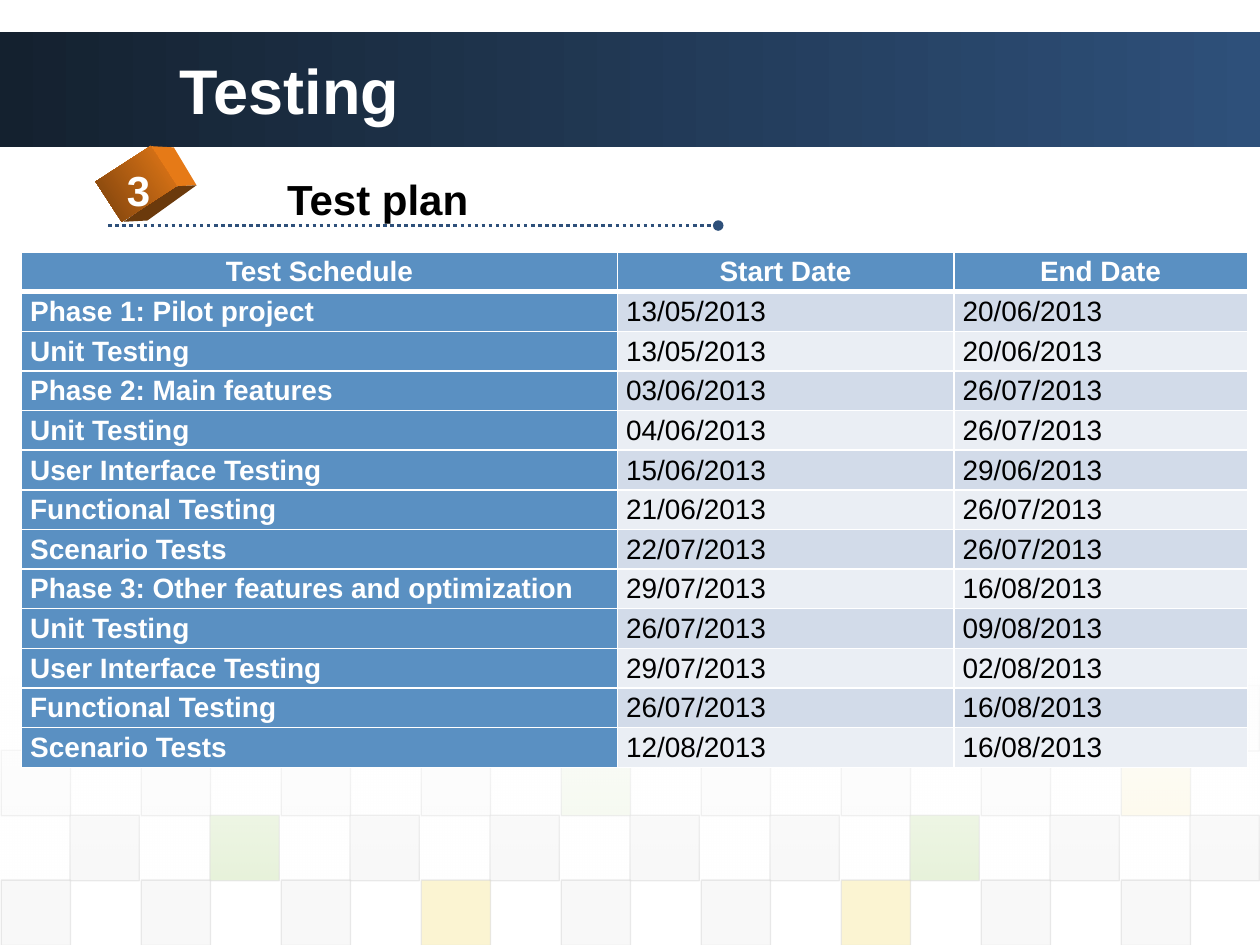
import pptx
import pptx.dml.color
import pptx.enum.dml
import pptx.enum.shapes
import pptx.enum.text
import pptx.oxml
import pptx.oxml.ns
import pptx.util
from lxml import etree

Inches = pptx.util.Inches
RGBColor = pptx.dml.color.RGBColor
ALIGN = pptx.enum.text.PP_ALIGN
ANCHOR = pptx.enum.text.MSO_ANCHOR
RECTANGLE = pptx.enum.shapes.MSO_SHAPE.RECTANGLE

WHITE, BLACK = RGBColor(255, 255, 255), RGBColor(0, 0, 0)
NAVY, DARK_NAVY = RGBColor(0x2E, 0x50, 0x7A), RGBColor(0x14, 0x21, 0x2F)
GREY, PALE_GREY = RGBColor(0xDD, 0xDD, 0xDD), RGBColor(0xEA, 0xEA, 0xEA)
GREEN, YELLOW = RGBColor(0x8A, 0xC2, 0x46), RGBColor(0xEF, 0xC8, 0x21)
ORANGE, BROWN = RGBColor(0xE6, 0x7A, 0x17), RGBColor(0x7A, 0x41, 0x0D)
DARK_BROWN = RGBColor(0x6B, 0x3A, 0x0C)
BLUE = RGBColor(0x5A, 0x90, 0xC2)
BANDS = RGBColor(0xD2, 0xDB, 0xE9), RGBColor(0xEA, 0xEE, 0xF4)

SCHEDULE = [
    ("Test Schedule", "Start Date", "End Date"),
    ("Phase 1: Pilot project", "13/05/2013", "20/06/2013"),
    ("Unit Testing", "13/05/2013", "20/06/2013"),
    ("Phase 2: Main features", "03/06/2013", "26/07/2013"),
    ("Unit Testing", "04/06/2013", "26/07/2013"),
    ("User Interface Testing", "15/06/2013", "29/06/2013"),
    ("Functional Testing", "21/06/2013", "26/07/2013"),
    ("Scenario Tests", "22/07/2013", "26/07/2013"),
    ("Phase 3: Other features and optimization", "29/07/2013", "16/08/2013"),
    ("Unit Testing", "26/07/2013", "09/08/2013"),
    ("User Interface Testing", "29/07/2013", "02/08/2013"),
    ("Functional Testing", "26/07/2013", "16/08/2013"),
    ("Scenario Tests", "12/08/2013", "16/08/2013"),
]
COLUMN_WIDTHS = [4.73, 2.67, 2.33]

# Checkerboard rows: first column, opacity %, base colour, coloured columns
TILE_ROWS = [
    (1, 5, PALE_GREY, {1: YELLOW, 7: YELLOW, 9: GREY, 11: YELLOW, 15: GREEN}),
    (0, 10, GREY, {8: GREEN, 16: YELLOW}),
    (1, 20, GREY, {3: GREEN, 13: GREEN}),
    (0, 20, GREY, {6: YELLOW, 12: YELLOW}),
]
TILE_TOP, TILE_STEP_X, TILE_STEP_Y = 5.44, 10 / 18, 0.515

# Visible sides of the cube, in inches
CUBE_SIDES = [
    ([(1.2, 1.16), (1.38, 1.17), (1.56, 1.47), (1.38, 1.48)], ORANGE),
    ([(0.98, 1.76), (1.38, 1.48), (1.56, 1.47), (1.17, 1.75)], DARK_BROWN),
]


def write_text(frame, text, size=16, color=WHITE, bold=True, align=None):
    paragraph = frame.paragraphs[0]
    paragraph.alignment = align
    run = paragraph.add_run()
    run.text = text
    font = run.font
    font.name, font.size, font.bold = "Arial", pptx.util.Pt(size), bold
    font.color.rgb = color
    return paragraph


def add_label(slide, box, text, anchor=ANCHOR.TOP, **text_format):
    frame = slide.shapes.add_textbox(*map(Inches, box)).text_frame
    frame.word_wrap = True
    frame.vertical_anchor = anchor
    write_text(frame, text, **text_format)


def add_rectangle(slide, box):
    shape = slide.shapes.add_shape(RECTANGLE, *map(Inches, box))
    shape.shadow.inherit = False
    shape.line.fill.background()
    return shape


def set_gradient(shape, colors, angle):
    shape.fill.gradient()
    shape.fill.gradient_angle = angle
    for stop, color in zip(shape.fill.gradient_stops, colors):
        stop.color.rgb = color


def set_opacity(color_parent, percent):
    color = next(color_parent.iter(pptx.oxml.ns.qn("a:srgbClr")))
    etree.SubElement(color, pptx.oxml.ns.qn("a:alpha"), val=str(percent * 1000))


def add_checkerboard(slide):
    for row, (first, opacity, base, accents) in enumerate(TILE_ROWS):
        for column in range(first, 18 - (1 - first), 2):
            tile = add_rectangle(slide, (column * TILE_STEP_X + 0.01 * (1 - first),
                                         TILE_TOP + row * TILE_STEP_Y, 0.55, 0.52))
            tile.fill.solid()
            tile.fill.fore_color.rgb = accents.get(column, base)
            set_opacity(tile.fill._xPr.solidFill, opacity)
            tile.line.color.rgb = GREY
            tile.line.width = pptx.util.Pt(0.75)
            set_opacity(tile.line._ln, 60)
    # White veil that fades downwards
    veil = add_rectangle(slide, (0, 5.37, 10, 1.62))
    set_gradient(veil, (WHITE, WHITE), 270)
    stops = veil.fill._fill._gradFill.gsLst
    for stop, opacity in zip(stops, (90, 0)):
        set_opacity(stop, opacity)


def add_cube(slide):
    for points, color in CUBE_SIDES:
        corners = [(Inches(x), Inches(y)) for x, y in points]
        builder = slide.shapes.build_freeform(*corners[0])
        builder.add_line_segments(corners[1:])
        side = builder.convert_to_shape()
        side.shadow.inherit = False
        side.fill.solid()
        side.fill.fore_color.rgb = color
        side.line.fill.background()
    front = add_rectangle(slide, (0.89, 1.2, 0.38, 0.52))
    front.rotation = 57
    set_gradient(front, (ORANGE, BROWN), 270)


def add_dotted_line(slide):
    line = slide.shapes.add_connector(pptx.enum.shapes.MSO_CONNECTOR.STRAIGHT,
                                      *map(Inches, (0.86, 1.79, 5.7, 1.79)))
    line.line.color.rgb = NAVY
    line.line.width = pptx.util.Pt(2)
    line.line.dash_style = pptx.enum.dml.MSO_LINE.ROUND_DOT
    etree.SubElement(line.line._ln, pptx.oxml.ns.qn("a:tailEnd"), type="oval")
    etree.SubElement(line._element.spPr, pptx.oxml.ns.qn("a:effectLst"))


def set_borders(cell, widths):
    properties = cell._tc.get_or_add_tcPr()
    for position, (side, width) in enumerate(widths.items()):
        properties.insert(position, pptx.oxml.parse_xml(
            f'<a:{side} {pptx.oxml.ns.nsdecls("a")} w="{pptx.util.Pt(width)}">'
            f'<a:solidFill><a:srgbClr val="{WHITE}"/></a:solidFill></a:{side}>'))


def add_schedule(slide):
    table = slide.shapes.add_table(len(SCHEDULE), len(COLUMN_WIDTHS),
                                   *map(Inches, (0.17, 2, 9.73, 4.09))).table
    for column, width in zip(table.columns, COLUMN_WIDTHS):
        column.width = Inches(width)
    for row, values in enumerate(SCHEDULE):
        for column, value in enumerate(values):
            cell = table.cell(row, column)
            heading = row == 0 or column == 0
            cell.margin_left = cell.margin_right = Inches(0.07)
            cell.margin_top = cell.margin_bottom = 0
            cell.fill.solid()
            cell.fill.fore_color.rgb = BLUE if heading else BANDS[(row - 1) % 2]
            set_borders(cell, {"lnL": 1, "lnR": 1, "lnT": 3 if row == 1 else 1,
                               "lnB": 3 if row == 0 else 1})
            paragraph = write_text(cell.text_frame, value, bold=heading,
                                   color=WHITE if heading else BLACK,
                                   align=ALIGN.CENTER if row == 0 else None)
            paragraph.line_spacing = 1.15
            paragraph.space_after = pptx.util.Pt(9)


def main():
    presentation = pptx.Presentation()
    presentation.slide_width, presentation.slide_height = Inches(10), Inches(7.5)
    slide = presentation.slides.add_slide(presentation.slide_layouts[6])

    # Background and title band
    band = add_rectangle(slide, (0, 0.25, 10, 0.92))
    set_gradient(band, (DARK_NAVY, NAVY), 0)
    add_checkerboard(slide)
    add_label(slide, (1.33, 0.25, 8.08, 0.92), "Testing", size=36, anchor=ANCHOR.MIDDLE)

    # Section heading
    add_dotted_line(slide)
    add_cube(slide)
    add_label(slide, (0.91, 1.26, 0.36, 0.5), "3", size=24, align=ALIGN.CENTER)
    add_label(slide, (2.18, 1.33, 5.14, 0.5), "Test plan", size=24, color=BLACK)

    add_schedule(slide)
    presentation.save("out.pptx")


if __name__ == "__main__":
    main()
